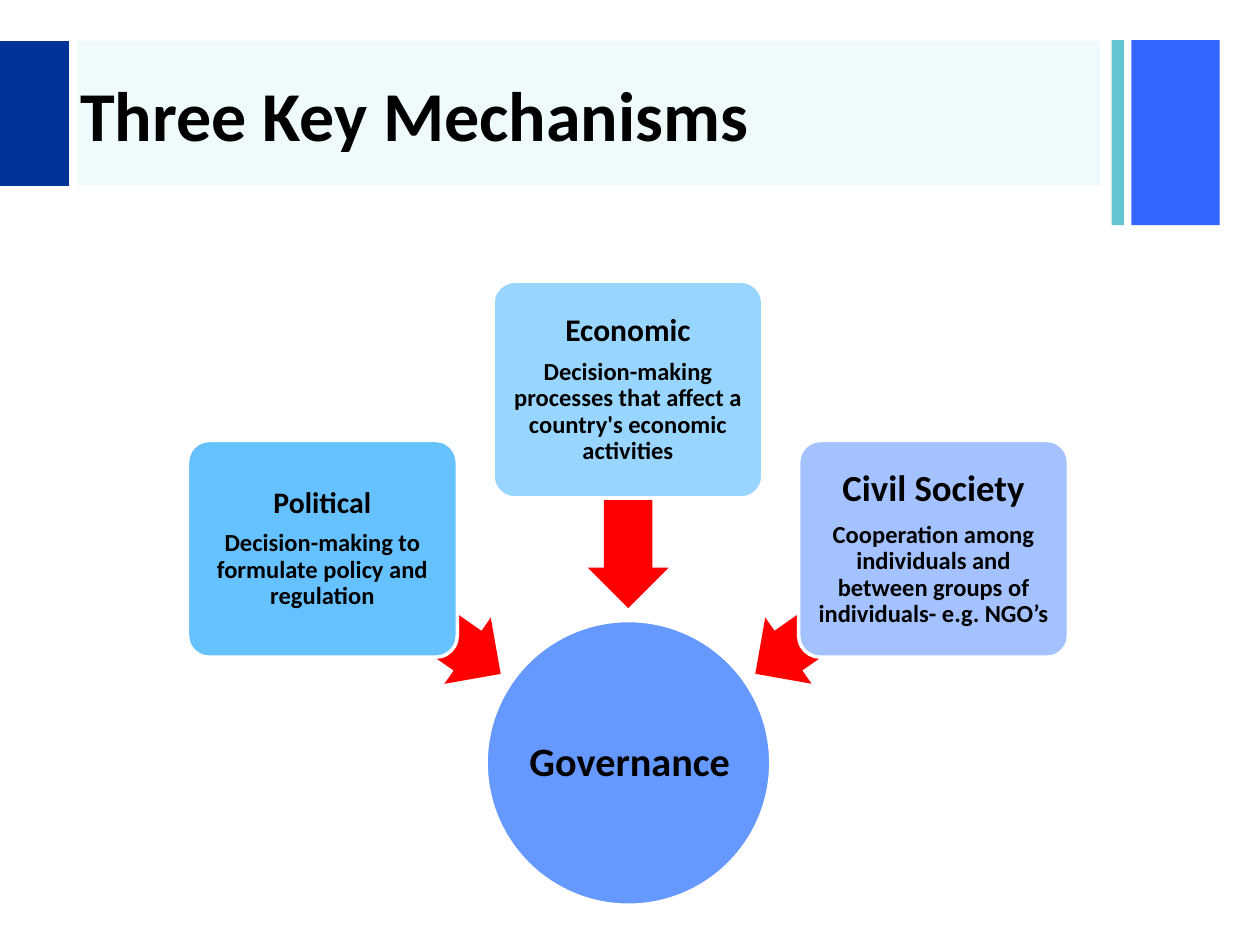
from dataclasses import dataclass

from lxml.etree import SubElement
from pptx import Presentation
from pptx.dml.color import RGBColor
from pptx.enum.shapes import MSO_SHAPE as Kind
from pptx.enum.text import MSO_ANCHOR as Anchor, PP_ALIGN as Align
from pptx.oxml.ns import qn
from pptx.util import Cm, Pt

HUES = {
    "blue": "3366FF", "teal": "65C4D2", "band": "14C5D0", "navy": "003399",
    "hub": "6699FF", "sky": "66C2FF", "pale": "99D6FF", "lilac": "A3C2FF",
    "red": "FF0000", "white": "FFFFFF", "black": "000000",
}
FONT = "Calibri"


@dataclass
class Box:
    left: float
    top: float
    width: float
    height: float


@dataclass
class Bar:
    box: Box
    hue: str
    alpha: int = 100


@dataclass
class Card:
    head: str
    size: int
    body: str
    hue: str
    top: float
    pad: float
    arrow: Box
    turn: int


BARS = [
    Bar(Box(22.81, 0.81, 1.78, 3.73), "blue"),
    Bar(Box(22.41, 0.81, 0.25, 3.73), "teal"),
    Bar(Box(1.55, 0.82, 20.63, 2.92), "band", 7),
    Bar(Box(0, 0.83, 1.39, 2.92), "navy"),
]
CARDS = [
    Card("Political", 17, "Decision-making to formulate policy and regulation",
         "sky", 8.88, 0.1, Box(6.1, 11.51, 4.39, 1.63), 215),
    Card("Economic", 18,
         "Decision-making processes that affect a country's economic activities",
         "pale", 5.67, 0, Box(10.47, 9.25, 4.39, 1.63), 270),
    Card("Civil Society", 21,
         "Cooperation among individuals and between groups of individuals- e.g. NGO’s",
         "lilac", 8.88, 0.1, Box(14.83, 11.51, 4.39, 1.63), 325),
]
START, STEP = 3.78, 6.16


def place(box: Box) -> tuple:
    """Return the box as lengths."""
    return Cm(box.left), Cm(box.top), Cm(box.width), Cm(box.height)


def paint(slide, kind, box: Box, hue: str, edge: bool = False):
    """Add a flat filled shape, with a white edge if asked."""
    shape = slide.shapes.add_shape(kind, *place(box))
    shape.shadow.inherit = False
    shape.fill.solid()
    shape.fill.fore_color.rgb = RGBColor.from_string(HUES[hue])
    if edge:
        shape.line.color.rgb = RGBColor.from_string(HUES["white"])
        shape.line.width = Pt(2)
    else:
        shape.line.fill.background()
    return shape


def fade(shape, alpha: int) -> None:
    """Set the opacity of a solid fill in percent."""
    tint = next(shape.element.spPr.iter(qn("a:srgbClr")))
    SubElement(tint, qn("a:alpha")).set("val", str(alpha * 1000))


def frame(shape, pad: float):
    """Prepare a wrapped, middle-anchored text frame."""
    text = shape.text_frame
    text.word_wrap = True
    text.vertical_anchor = Anchor.MIDDLE
    text.margin_left = text.margin_right = Cm(pad)
    text.margin_top = text.margin_bottom = Cm(pad)
    return text


def write(para, words: str, size: int) -> None:
    """Add one bold black run."""
    run = para.add_run()
    run.text = words
    run.font.name = FONT
    run.font.size = Pt(size)
    run.font.bold = True
    run.font.color.rgb = RGBColor.from_string(HUES["black"])


def label(shape, pad: float, lines: list[tuple[str, int]]) -> None:
    """Fill a shape with centred lines."""
    text = frame(shape, pad)
    for index, (words, size) in enumerate(lines):
        para = text.add_paragraph() if index else text.paragraphs[0]
        para.alignment = Align.CENTER
        para.line_spacing = 0.9
        para.space_after = Pt(round(size * 0.35, 1))
        write(para, words, size)


def draw(slide, card: Card, left: float) -> None:
    """Draw a mechanism's arrow and then its card."""
    arrow = paint(slide, Kind.LEFT_ARROW, card.arrow, "red")
    arrow.adjustments[0] = 0.6
    arrow.adjustments[1] = 0.5
    arrow.rotation = card.turn
    box = Box(left, card.top, 5.44, 4.37)
    shape = paint(slide, Kind.ROUNDED_RECTANGLE, box, card.hue, True)
    shape.adjustments[0] = 0.1
    label(shape, card.pad, [(card.head, card.size), (card.body, 14)])


def main() -> None:
    """Build and save the slide."""
    deck = Presentation()
    deck.slide_width, deck.slide_height = Cm(25.4), Cm(19.05)
    slide = deck.slides.add_slide(deck.slide_layouts[6])
    for bar in BARS:
        shape = paint(slide, Kind.RECTANGLE, bar.box, bar.hue)
        if bar.alpha < 100:
            fade(shape, bar.alpha)
    title = slide.shapes.add_textbox(*place(Box(1.37, 0.86, 21, 2.84)))
    write(frame(title, 0.25).paragraphs[0], "Three Key Mechanisms", 40)
    paint(slide, Kind.OVAL, Box(9.8, 12.51, 5.74, 5.74), "hub", True)
    hub = slide.shapes.add_textbox(*place(Box(10.5, 13.36, 4.4, 4.06)))
    label(hub, 0.05, [("Governance", 23)])
    for index, card in enumerate(CARDS):
        draw(slide, card, START + index * STEP)
    deck.save("out.pptx")


if __name__ == "__main__":
    main()
